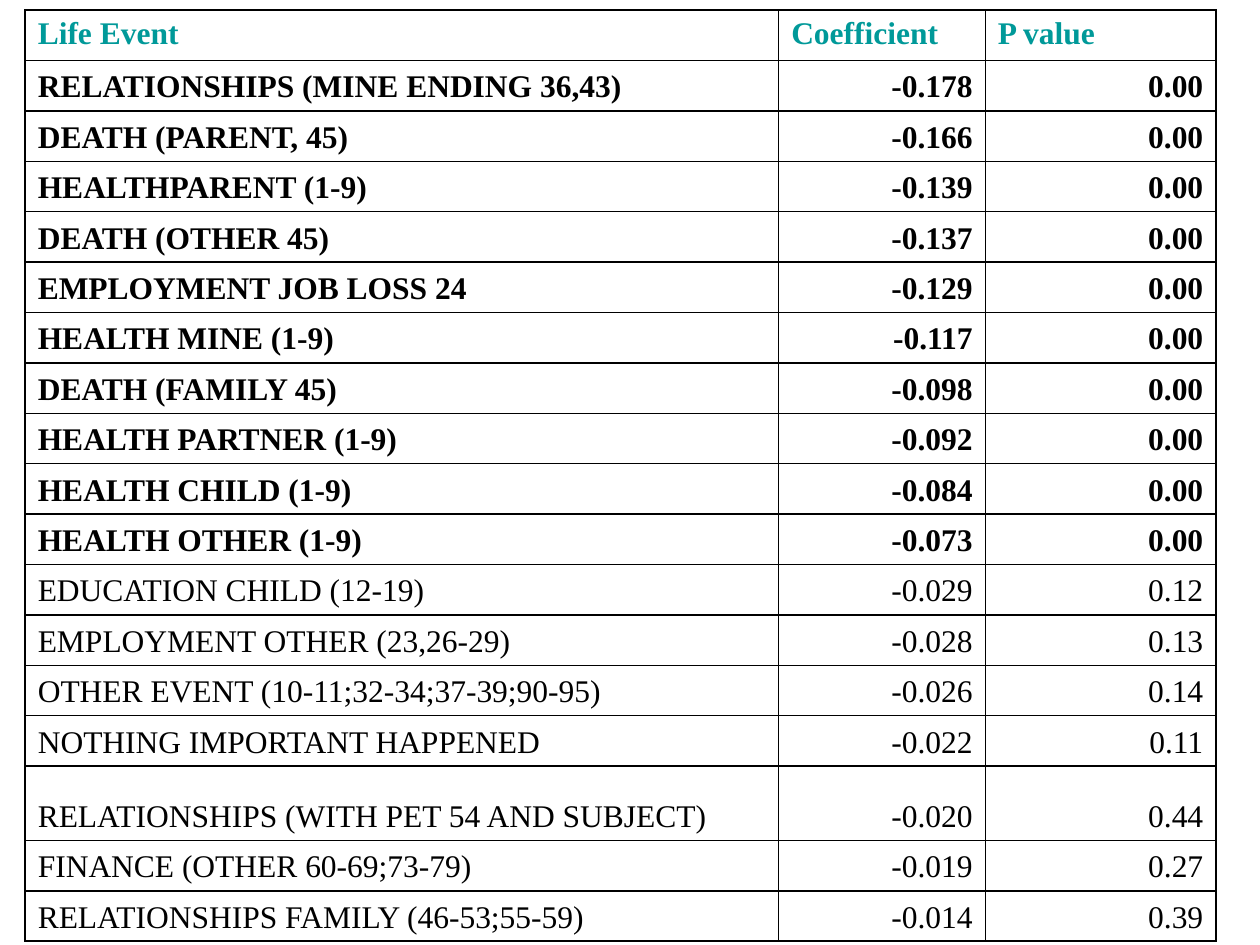
from lxml import etree
from pptx import Presentation
from pptx import util as u
from pptx.dml.color import RGBColor
from pptx.enum import text
from pptx.oxml import ns

WHITE = RGBColor(0xFF, 0xFF, 0xFF)
BLACK = RGBColor(0x00, 0x00, 0x00)
TEAL = RGBColor(0x00, 0x99, 0x99)

HEADINGS = ("Life Event", "Coefficient", "P value")
EVENTS = [
    ("RELATIONSHIPS (MINE ENDING 36,43)", "-0.178", "0.00"),
    ("DEATH (PARENT, 45)", "-0.166", "0.00"),
    ("HEALTHPARENT (1-9)", "-0.139", "0.00"),
    ("DEATH (OTHER 45)", "-0.137", "0.00"),
    ("EMPLOYMENT JOB LOSS 24", "-0.129", "0.00"),
    ("HEALTH MINE (1-9)", "-0.117", "0.00"),
    ("DEATH (FAMILY 45)", "-0.098", "0.00"),
    ("HEALTH PARTNER (1-9)", "-0.092", "0.00"),
    ("HEALTH CHILD (1-9)", "-0.084", "0.00"),
    ("HEALTH OTHER (1-9)", "-0.073", "0.00"),
    ("EDUCATION CHILD (12-19)", "-0.029", "0.12"),
    ("EMPLOYMENT OTHER (23,26-29)", "-0.028", "0.13"),
    ("OTHER EVENT (10-11;32-34;37-39;90-95)", "-0.026", "0.14"),
    ("NOTHING IMPORTANT HAPPENED", "-0.022", "0.11"),
    ("RELATIONSHIPS (WITH PET 54 AND SUBJECT)", "-0.020", "0.44"),
    ("FINANCE (OTHER 60-69;73-79)", "-0.019", "0.27"),
    ("RELATIONSHIPS FAMILY (46-53;55-59)", "-0.014", "0.39"),
]
COLUMN_WIDTHS = (5.98, 1.64, 1.83)
ROW_HEIGHT, TALL_ROW_HEIGHT = 0.4, 0.59
TALL_EVENT = "RELATIONSHIPS (WITH PET 54 AND SUBJECT)"


class SlideBuilder:
    font_name = "Times New Roman"
    font_size = u.Pt(18)
    border_width = u.Pt(1)

    def __init__(self, slide):
        self.slide = slide

    def table(self, left, top, widths, heights):
        grid = self.slide.shapes.add_table(
            len(heights), len(widths), u.Inches(left), u.Inches(top),
            u.Inches(sum(widths)), u.Inches(sum(heights))).table
        grid.first_row = grid.horz_banding = False
        for column, width in zip(grid.columns, widths):
            column.width = u.Inches(width)
        for row, height in zip(grid.rows, heights):
            row.height = u.Inches(height)
        return grid

    def cell(self, cell, words, color, bold, align, anchor):
        cell.text = words
        cell.vertical_anchor = anchor
        paragraph = cell.text_frame.paragraphs[0]
        paragraph.alignment = align
        font = paragraph.font
        font.name, font.size, font.bold = self.font_name, self.font_size, bold
        font.color.rgb = color
        self.borders(cell)
        cell.fill.solid()
        cell.fill.fore_color.rgb = WHITE

    def borders(self, cell):
        properties = cell._tc.get_or_add_tcPr()
        for side in ("lnL", "lnR", "lnT", "lnB"):
            line = etree.SubElement(properties, ns.qn(f"a:{side}"), w=str(self.border_width))
            fill = etree.SubElement(line, ns.qn("a:solidFill"))
            etree.SubElement(fill, ns.qn("a:srgbClr"), val=str(BLACK))


def main():
    deck = Presentation()
    deck.slide_width, deck.slide_height = u.Inches(10), u.Inches(7.5)
    builder = SlideBuilder(deck.slides.add_slide(deck.slide_layouts[6]))

    # Table grid
    heights = [ROW_HEIGHT] + [TALL_ROW_HEIGHT if event == TALL_EVENT else ROW_HEIGHT
                              for event, _, _ in EVENTS]
    coefficients = builder.table(0.2, 0.08, COLUMN_WIDTHS, heights)

    # Headings
    left, right = text.PP_ALIGN.LEFT, text.PP_ALIGN.RIGHT
    for column, heading in enumerate(HEADINGS):
        builder.cell(coefficients.cell(0, column), heading, TEAL, True,
                     left, text.MSO_ANCHOR.TOP)

    # Life events, with the significant ones in bold
    for row, event in enumerate(EVENTS, start=1):
        significant = event[-1] == "0.00"
        for column, words in enumerate(event):
            builder.cell(coefficients.cell(row, column), words, BLACK, significant,
                         right if column else left, text.MSO_ANCHOR.BOTTOM)

    deck.save("out.pptx")


if __name__ == "__main__":
    main()
